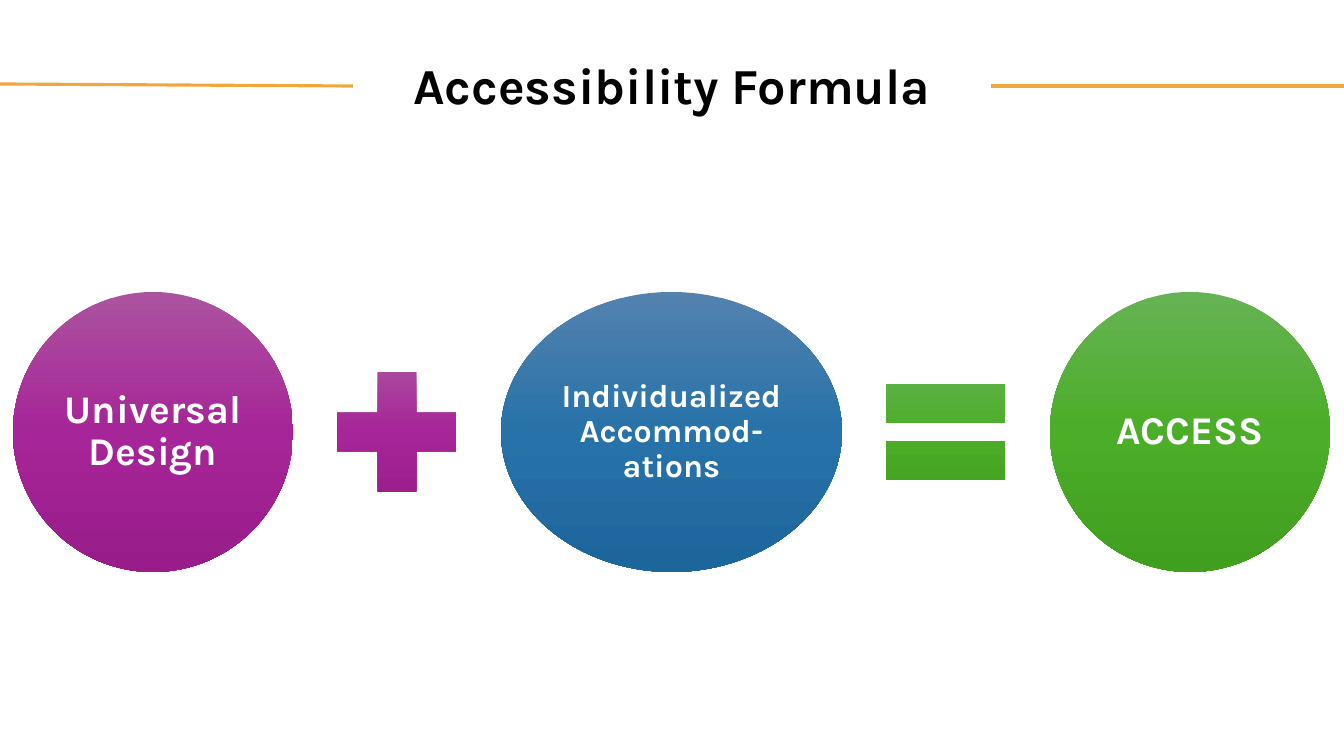
"""Build the Accessibility Formula slide."""
from copy import deepcopy
from dataclasses import dataclass

from lxml import etree
from pptx import Presentation
from pptx.dml.color import RGBColor
from pptx.enum.shapes import MSO_CONNECTOR, MSO_SHAPE
from pptx.enum.text import MSO_ANCHOR, MSO_AUTO_SIZE, PP_ALIGN
from pptx.oxml.ns import qn
from pptx.util import Pt

OVAL, PLUS, EQUAL = MSO_SHAPE.OVAL, MSO_SHAPE.MATH_PLUS, MSO_SHAPE.MATH_EQUAL
LINE = MSO_CONNECTOR.STRAIGHT
MIDDLE, CENTER = MSO_ANCHOR.MIDDLE, PP_ALIGN.CENTER
NO_FIT = MSO_AUTO_SIZE.NONE


@dataclass(frozen=True)
class Theme:
    font: str = "Karla"
    black: str = "000000"
    white: str = "FFFFFF"
    gold: str = "F2A63C"
    purple: tuple = ("AC53A0", "A62598", "991C8B")
    blue: tuple = ("5382AF", "2772A9", "1D669C")
    green: tuple = ("66B354", "4BAD28", "409F1E")
    head: int = 36
    large: int = 28
    small: int = 23


T = Theme()
TITLE = "Accessibility Formula"
TERMS = [
    (OVAL, 280, 280, T.purple, "Universal Design", T.large, 4),
    (PLUS, 162, 162, T.purple, "", T.large, 4),
    (OVAL, 341, 280, T.blue, "Individualized Accommod-ations", T.small, 3),
    (EQUAL, 162, 162, T.green, "", T.large, 4),
    (OVAL, 280, 280, T.green, "ACCESS", T.large, 4),
]
RULES = [(0, 84, 353, 86), (991, 86, 1344, 86)]
WIDE, HIGH = 1344, 756
LEFT, GAP, MID = 13, 23, 432
SCALE = 914400 / 100.8


def px(*nums):
    return [round(n * SCALE) for n in nums]


def put(item, **values):
    for name, value in values.items():
        setattr(item, name, value)


def write(shape, text, size, color):
    frame = shape.text_frame
    put(frame, text=text, word_wrap=True, auto_size=NO_FIT, vertical_anchor=MIDDLE)
    para = frame.paragraphs[0]
    put(para, alignment=CENTER, line_spacing=0.9)
    font = para.runs[0].font
    put(font, name=T.font, size=Pt(size), bold=True)
    font.color.rgb = RGBColor.from_string(color)


def shade(shape, colors):
    fill = shape.fill
    fill.gradient()
    fill.gradient_angle = 270
    stops = shape.element.spPr.find(qn("a:gradFill")).find(qn("a:gsLst"))
    stops.append(deepcopy(stops[-1]))
    for stop, color, place in zip(fill.gradient_stops, colors, (0, 0.5, 1)):
        stop.color.rgb = RGBColor.from_string(color)
        stop.position = place


def main():
    deck = Presentation()
    wide, high = px(WIDE, HIGH)
    put(deck, slide_width=wide, slide_height=high)
    slide = deck.slides.add_slide(deck.slide_layouts[5])
    shapes = slide.shapes

    for ends in RULES:
        rule = shapes.add_connector(LINE, *px(*ends))
        rule.line.color.rgb = RGBColor.from_string(T.gold)
        rule.line.width = Pt(2.25)
        etree.SubElement(rule.element.spPr, qn("a:effectLst"))

    title = shapes.title
    left, top, width, height = px(353, 15, 638, 146)
    put(title, left=left, top=top, width=width, height=height)
    write(title, TITLE, T.head, T.black)

    x = LEFT
    for kind, w, h, colors, text, size, inset in TERMS:
        shape = shapes.add_shape(kind, *px(x, MID - h / 2, w, h))
        shape.shadow.inherit = False
        shape.line.fill.background()
        shade(shape, colors)
        if text:
            pad = px(inset)[0]
            put(shape.text_frame, margin_left=pad, margin_right=pad,
                margin_top=pad, margin_bottom=pad)
            write(shape, text, size, T.white)
        x += w + GAP

    deck.save("out.pptx")


if __name__ == "__main__":
    main()
